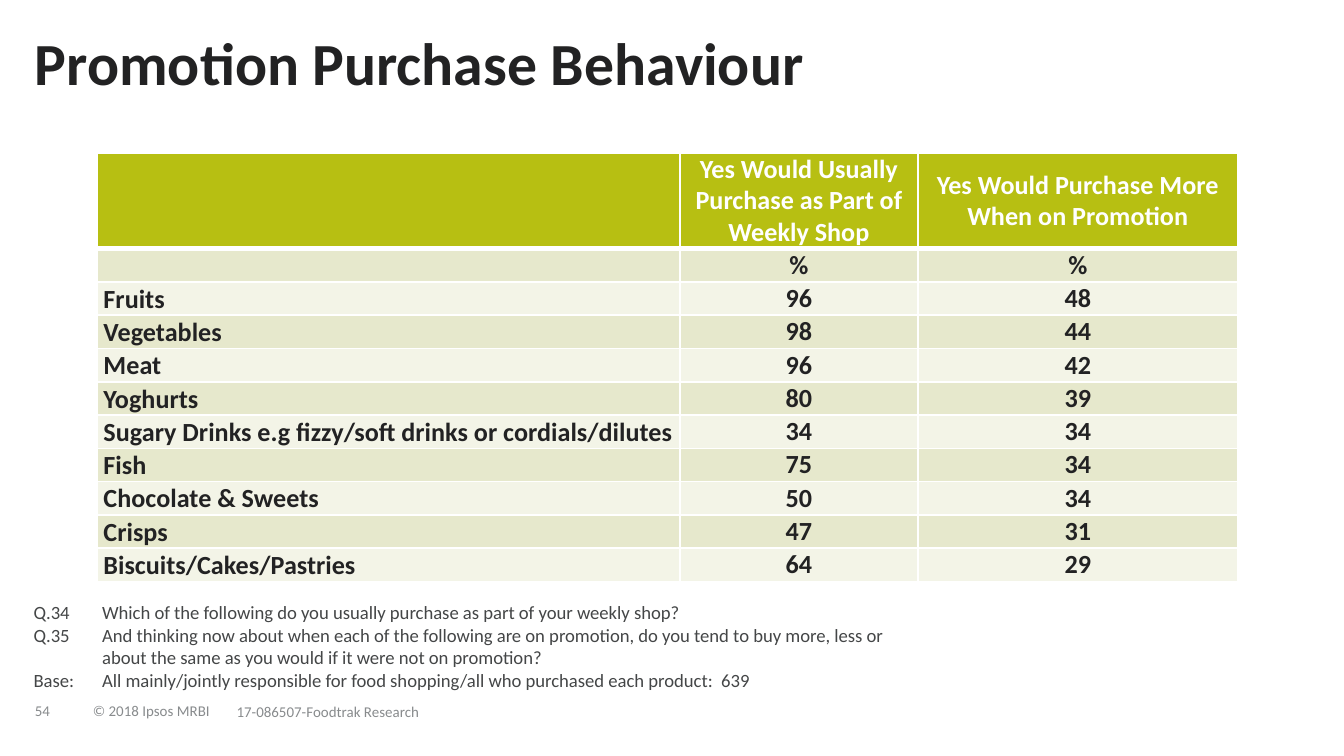
import pptx
import pptx.util
import pptx.dml.color
import pptx.enum.text
import pptx.oxml
import pptx.oxml.ns
from lxml import etree

Inches = pptx.util.Inches
Pt = pptx.util.Pt
RGBColor = pptx.dml.color.RGBColor
PP_ALIGN = pptx.enum.text.PP_ALIGN
MSO_ANCHOR = pptx.enum.text.MSO_ANCHOR
qn = pptx.oxml.ns.qn

WHITE = RGBColor(0xFF, 0xFF, 0xFF)
INK = RGBColor(0x22, 0x22, 0x23)
NOTE = RGBColor(0x44, 0x46, 0x47)
GREY = RGBColor(0x88, 0x8B, 0x8D)
GREEN = RGBColor(0xB7, 0xBF, 0x12)
BAND_DARK = RGBColor(0xE6, 0xE8, 0xCC)
BAND_LIGHT = RGBColor(0xF3, 0xF4, 0xE7)


def write(p, text, size=14, color=INK, bold=False, align=PP_ALIGN.LEFT, spacing=None):
    p.text = text
    p.alignment = align
    p.line_spacing = spacing
    for r in p.runs:
        r.font.name = "Calibri"
        r.font.size = Pt(size)
        r.font.bold = bold
        r.font.color.rgb = color
    if not text:
        etree.SubElement(p._p, qn("a:endParaRPr"), sz=str(size * 100))


def set_frame(tf, anchor, wrap):
    tf.margin_left = tf.margin_right = tf.margin_top = tf.margin_bottom = 0
    tf.vertical_anchor = anchor
    tf.word_wrap = wrap


prs = pptx.Presentation()
prs.slide_width = Inches(10)
prs.slide_height = Inches(10 * 9 / 16)
s = prs.slides.add_slide(prs.slide_layouts[5])

title = s.shapes.title
title.left, title.top = Inches(0.26), Inches(0.25)
title.width, title.height = Inches(7.95), Inches(0.48)
set_frame(title.text_frame, MSO_ANCHOR.MIDDLE, True)
write(title.text_frame.paragraphs[0], "Promotion Purchase Behaviour", size=32, bold=True, spacing=0.9)

footer = [
    ("54", 0.26, 5.17, 0.34, 0.26),
    ("© 2018 Ipsos MRBI", 0.69, 5.21, 0.95, 0.18),
    ("17-086507-Foodtrak Research", 1.76, 5.15, 2.72, 0.31),
]
for text, x, y, w, h in footer:
    sp = s.shapes.add_textbox(Inches(x), Inches(y), Inches(w), Inches(h))
    set_frame(sp.text_frame, MSO_ANCHOR.MIDDLE, False)
    write(sp.text_frame.paragraphs[0], text, size=8, color=GREY, spacing=0.85)

rows = [
    ("", "Yes Would Usually Purchase as Part of Weekly Shop", "Yes Would Purchase More When on Promotion"),
    ("", "%", "%"),
    ("Fruits", "96", "48"),
    ("Vegetables", "98", "44"),
    ("Meat", "96", "42"),
    ("Yoghurts", "80", "39"),
    ("Sugary Drinks e.g fizzy/soft drinks or cordials/dilutes", "34", "34"),
    ("Fish", "75", "34"),
    ("Chocolate & Sweets", "50", "34"),
    ("Crisps", "47", "31"),
    ("Biscuits/Cakes/Pastries", "64", "29"),
]
header_height = 0.71
row_height = (3.19 - header_height) / (len(rows) - 1)
table = s.shapes.add_table(len(rows), 3, Inches(0.72), Inches(1.14), Inches(8.49), Inches(3.19)).table
for column, width in zip(table.columns, (4.34, 1.77, 2.38)):
    column.width = Inches(width)

for i, row in enumerate(rows):
    table.rows[i].height = Inches(row_height if i else header_height)
    fill = (BAND_DARK if i % 2 else BAND_LIGHT) if i else GREEN
    for j, text in enumerate(row):
        cell = table.cell(i, j)
        cell.margin_left = Inches(0.1 if j else 0.05)
        cell.margin_right = Inches(0.1 if j else 0.01)
        cell.margin_top = cell.margin_bottom = 0
        cell.vertical_anchor = MSO_ANCHOR.MIDDLE if j else MSO_ANCHOR.BOTTOM
        write(cell.text_frame.paragraphs[0], text, color=INK if i else WHITE, bold=True,
              align=PP_ALIGN.CENTER if j else PP_ALIGN.LEFT)
        for side in "LRTB":
            thick = (i, side) in ((0, "B"), (1, "T"))
            ln = etree.SubElement(cell._tc.get_or_add_tcPr(), qn("a:ln" + side), w=str(Pt(3 if thick else 1)))
            solid = etree.SubElement(ln, qn("a:solidFill"))
            etree.SubElement(solid, qn("a:srgbClr"), val=str(WHITE))
        cell.fill.solid()
        cell.fill.fore_color.rgb = fill

notes = [
    "Q.34\tWhich of the following do you usually purchase as part of your weekly shop?",
    "Q.35\tAnd thinking now about when each of the following are on promotion, do you tend to buy more, less or"
    "\vabout the same as you would if it were not on promotion?",
    "Base:\tAll mainly/jointly responsible for food shopping/all who purchased each product:  639",
]
sp = s.shapes.add_textbox(Inches(0.25), Inches(4.47), Inches(7.35), Inches(0.67))
tf = sp.text_frame
set_frame(tf, MSO_ANCHOR.BOTTOM, True)
for i, text in enumerate(notes):
    p = tf.add_paragraph() if i else tf.paragraphs[0]
    write(p, text, size=10, color=NOTE)
    pPr = p._p.get_or_add_pPr()
    pPr.set("marL", str(Inches(0.51)))
    pPr.set("indent", str(-Inches(0.51)))

prs.save("out.pptx")
